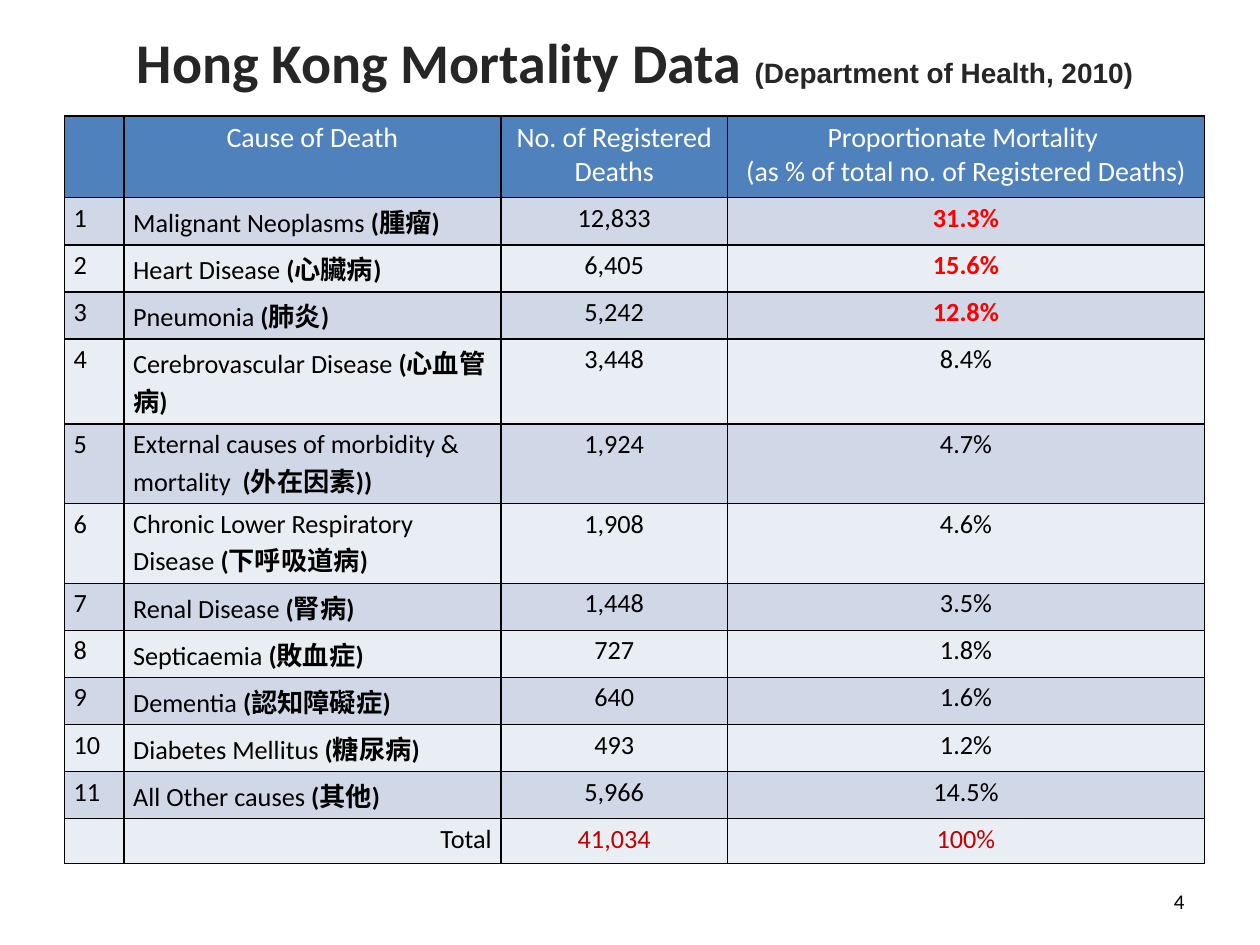
from pptx import Presentation
from pptx.dml.color import RGBColor
from pptx.enum.text import MSO_ANCHOR, PP_ALIGN
from pptx.oxml import parse_xml
from pptx.oxml.ns import nsdecls
from pptx.util import Pt

BLACK = RGBColor(0x00, 0x00, 0x00)
WHITE = RGBColor(0xFF, 0xFF, 0xFF)
DARK_GREY = RGBColor(0x26, 0x26, 0x26)
RED = RGBColor(0xFF, 0x00, 0x00)
DARK_RED = RGBColor(0xC0, 0x00, 0x00)
HEADER_BLUE = RGBColor(0x4F, 0x81, 0xBD)
BANDS = (RGBColor(0xD0, 0xD8, 0xE8), RGBColor(0xE9, 0xED, 0xF4))

LEFT, CENTER, RIGHT = PP_ALIGN.LEFT, PP_ALIGN.CENTER, PP_ALIGN.RIGHT
COLUMN_WIDTHS = (34, 215.3, 129.6, 272.4)
HEADER_HEIGHT, ROW_HEIGHT, TALL_ROW_HEIGHT = 46.8, 25.7, 45.5
TALL_ROWS = (5, 6)
TOP_CAUSES = 3

HEADERS = ("", "Cause of Death", "No. of Registered Deaths",
           "Proportionate Mortality \n(as % of total no. of Registered Deaths)")
CAUSES = (
    ("Malignant Neoplasms ", "(腫瘤)", "12,833", "31.3%"),
    ("Heart Disease ", "(心臟病)", "6,405", "15.6%"),
    ("Pneumonia ", "(肺炎)", "5,242", "12.8%"),
    ("Cerebrovascular Disease ", "(心血管病)", "3,448", "8.4%"),
    ("External causes of morbidity & mortality  ", "(外在因素))", "1,924", "4.7%"),
    ("Chronic Lower Respiratory Disease ", "(下呼吸道病)", "1,908", "4.6%"),
    ("Renal Disease ", "(腎病)", "1,448", "3.5%"),
    ("Septicaemia ", "(敗血症)", "727", "1.8%"),
    ("Dementia ", "(認知障礙症)", "640", "1.6%"),
    ("Diabetes Mellitus ", "(糖尿病)", "493", "1.2%"),
    ("All Other causes ", "(其他)", "5,966", "14.5%"),
)


def set_font(font, size, color, bold=False, name="Calibri"):
    font.name = name
    font.size = Pt(size)
    font.bold = bold
    font.color.rgb = color


def place(shape, left, top, width, height):
    shape.left, shape.top = Pt(left), Pt(top)
    shape.width, shape.height = Pt(width), Pt(height)


def add_title(slide, left, top, width, height):
    title = slide.shapes.title
    place(title, left, top, width, height)
    frame = title.text_frame
    frame.vertical_anchor = MSO_ANCHOR.MIDDLE
    paragraph = frame.paragraphs[0]
    paragraph.alignment = CENTER
    for text, size, name in (("Hong Kong Mortality Data ", 32, "Calibri"),
                             ("(Department of Health, 2010)", 16, "Arial")):
        run = paragraph.add_run()
        run.text = text
        set_font(run.font, size, DARK_GREY, True, name)


def add_borders(cell):
    """Draw 1 pt black lines; call before the fill, which must follow them."""
    properties = cell._tc.get_or_add_tcPr()
    for side in ("lnL", "lnR", "lnT", "lnB"):
        properties.append(parse_xml(
            f'<a:{side} {nsdecls("a")} w="{Pt(1)}"><a:solidFill>'
            f'<a:srgbClr val="{BLACK}"/></a:solidFill></a:{side}>'))


def fill_cell(cell, text, fill, alignment=CENTER, size=15, color=BLACK, bold=False):
    cell.margin_left = cell.margin_right = Pt(5.2)
    cell.margin_top = cell.margin_bottom = Pt(2.6)
    add_borders(cell)
    cell.fill.solid()
    cell.fill.fore_color.rgb = fill
    cell.text = text
    for paragraph in cell.text_frame.paragraphs:
        paragraph.alignment = alignment
        set_font(paragraph.font, size, color, bold)


def fill_cause(cell, english, chinese, fill):
    """Write the English name in regular and the Chinese name in bold."""
    fill_cell(cell, "", fill, LEFT)
    paragraph = cell.text_frame.paragraphs[0]
    for text, bold in ((english, False), (chinese, True)):
        run = paragraph.add_run()
        run.text = text
        set_font(run.font, 15, BLACK, bold)


def add_mortality_table(slide, left, top):
    row_count = len(CAUSES) + 2
    heights = [HEADER_HEIGHT] + [
        TALL_ROW_HEIGHT if row in TALL_ROWS else ROW_HEIGHT
        for row in range(1, row_count)]
    table = slide.shapes.add_table(
        row_count, len(COLUMN_WIDTHS), Pt(left), Pt(top),
        Pt(sum(COLUMN_WIDTHS)), Pt(sum(heights))).table
    for column, width in zip(table.columns, COLUMN_WIDTHS):
        column.width = Pt(width)
    for row, height in zip(table.rows, heights):
        row.height = Pt(height)

    for column, text in enumerate(HEADERS):
        fill_cell(table.cell(0, column), text, HEADER_BLUE, size=16, color=WHITE)

    for rank, (english, chinese, deaths, share) in enumerate(CAUSES, 1):
        band = BANDS[(rank - 1) % 2]
        is_top = rank <= TOP_CAUSES
        fill_cell(table.cell(rank, 0), str(rank), band, LEFT)
        fill_cause(table.cell(rank, 1), english, chinese, band)
        fill_cell(table.cell(rank, 2), deaths, band)
        fill_cell(table.cell(rank, 3), share, band,
                  color=RED if is_top else BLACK, bold=is_top)

    totals = (("", LEFT, BLACK), ("Total", RIGHT, BLACK),
              ("41,034", CENTER, DARK_RED), ("100%", CENTER, DARK_RED))
    for column, (text, alignment, color) in enumerate(totals):
        fill_cell(table.cell(row_count - 1, column), text, BANDS[1],
                  alignment, color=color)


def add_page_number(slide, left, top, width, height):
    box = slide.shapes.add_textbox(Pt(left), Pt(top), Pt(width), Pt(height))
    frame = box.text_frame
    frame.word_wrap = True
    frame.vertical_anchor = MSO_ANCHOR.MIDDLE
    paragraph = frame.paragraphs[0]
    paragraph.text = "4"
    paragraph.alignment = RIGHT
    set_font(paragraph.font, 12, BLACK)


def main():
    presentation = Presentation()
    presentation.slide_width, presentation.slide_height = Pt(720), Pt(540)
    slide = presentation.slides.add_slide(presentation.slide_layouts[5])
    add_title(slide, 25.2, 15.1, 675.4, 39.6)
    add_mortality_table(slide, 36.9, 66.2)
    add_page_number(slide, 516, 500.5, 168, 28.75)
    presentation.save("out.pptx")


if __name__ == "__main__":
    main()
